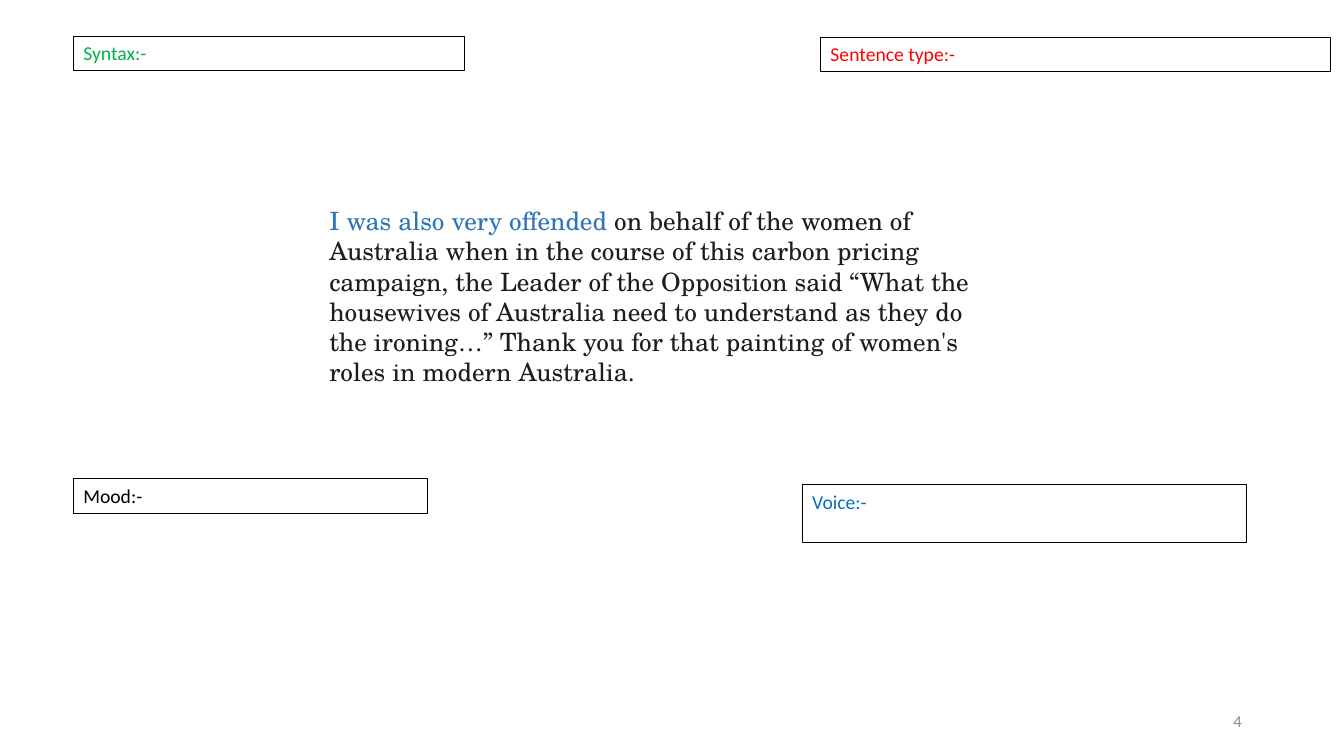
from pptx import Presentation
from pptx import util as u
from pptx.dml.color import RGBColor
from pptx.enum import text

LABELS = [
    ("Sentence type:-", "FF0000", (20.68, 0.94, 12.85, 0.86)),
    ("Voice:-", "0070C0", (20.22, 12.22, 11.2, 1.45)),
    ("Mood:-", "000000", (1.85, 12.07, 8.92, 0.86)),
    ("Syntax:-", "00B050", (1.85, 0.91, 9.86, 0.86)),
]
QUOTE = [
    ("I was also very offended ", "2E75B6"),
    ("on behalf of the women of Australia when in the course of this carbon "
     "pricing campaign, the Leader of the Opposition said “What the "
     "housewives of Australia need to understand as they do the ironing…” "
     "Thank you for that painting of women's roles in modern Australia.",
     "1D1D1D"),
]
QUOTE_AT = (8.05, 5.05, 16.94, 4.88)
NUMBER = [("4", "8C8C8C")]
NUMBER_AT = (23.93, 17.65, 7.62, 1.02)


def paint(color, code):
    color.rgb = RGBColor.from_string(code)


def add_box(slide, place, parts, size, font="Calibri"):
    box = slide.shapes.add_textbox(*map(u.Cm, place))
    box.text_frame.word_wrap = True
    para = box.text_frame.paragraphs[0]
    for words, code in parts:
        run = para.add_run()
        run.text = words
        run.font.name = font
        run.font.size = u.Pt(size)
        paint(run.font.color, code)
    return box


def main():
    deck = Presentation()
    deck.slide_width, deck.slide_height = u.Cm(33.87), u.Cm(19.05)
    slide = deck.slides.add_slide(deck.slide_layouts[6])

    for words, code, place in LABELS:
        label = add_box(slide, place, [(words, code)], 14)
        label.line.width = u.Pt(0.75)
        paint(label.line.color, "000000")

    quote = add_box(slide, QUOTE_AT, QUOTE, 18, "TeX Gyre Schola")
    quote.text_frame.paragraphs[0].space_after = u.Pt(12)

    number = add_box(slide, NUMBER_AT, NUMBER, 12)
    number.text_frame.vertical_anchor = text.MSO_ANCHOR.MIDDLE
    number.text_frame.paragraphs[0].alignment = text.PP_ALIGN.RIGHT

    deck.save("out.pptx")


if __name__ == "__main__":
    main()
